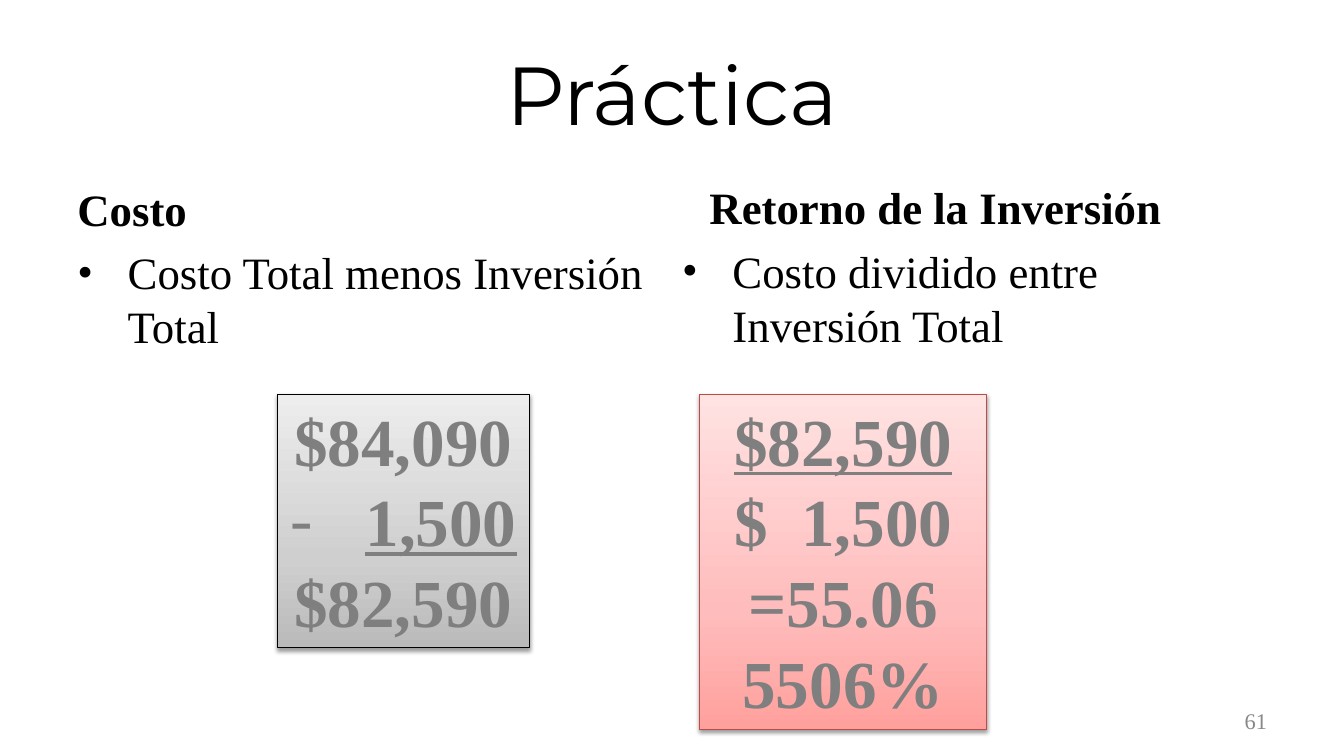
from copy import deepcopy

from lxml.etree import SubElement
from pptx import Presentation
from pptx.dml.color import RGBColor
from pptx.enum.shapes import MSO_SHAPE
from pptx.enum.text import MSO_ANCHOR, MSO_AUTO_SIZE, PP_ALIGN
from pptx.oxml.ns import qn
from pptx.util import Cm, Pt

BLACK = RGBColor(0x00, 0x00, 0x00)
GRAY = RGBColor(0x7F, 0x7F, 0x7F)
NUMBER_GRAY = RGBColor(0x88, 0x88, 0x88)
RED_LINE = RGBColor(0xBD, 0x4B, 0x48)
GRAY_SHADES = (RGBColor(0xBA, 0xBA, 0xBA), RGBColor(0xCF, 0xCF, 0xCF), RGBColor(0xED, 0xED, 0xED))
RED_SHADES = (RGBColor(0xFF, 0xA0, 0x9D), RGBColor(0xFF, 0xBC, 0xBC), RGBColor(0xFF, 0xE2, 0xE2))
STOP_POSITIONS = (0, 0.35, 1)

SERIF = "Times New Roman"
TITLE = {"name": "Montserrat", "size": Pt(58.7)}
BODY = {"name": SERIF, "size": Pt(32)}
HEADING = {**BODY, "bold": True}
FIGURE = {"name": SERIF, "size": Pt(48), "bold": True}
UNDERLINED = {**FIGURE, "underline": True}
NUMBER = {"name": SERIF, "size": Pt(16)}


def add_bullet(paragraph, character, color, indent):
    properties = paragraph._p.get_or_add_pPr()
    properties.set("marL", str(indent))
    properties.set("indent", str(-indent))
    bullet_color = SubElement(properties, qn("a:buClr"))
    SubElement(bullet_color, qn("a:srgbClr"), val=str(color))
    SubElement(properties, qn("a:buFont"), typeface=SERIF)
    SubElement(properties, qn("a:buChar"), char=character)


def write(paragraph, text, values, color, alignment):
    paragraph.alignment = alignment
    run = paragraph.add_run()
    run.text = text
    for name, value in values.items():
        setattr(run.font, name, value)
    run.font.color.rgb = color


def add_text(slide, bounds, text, values, color=BLACK, alignment=PP_ALIGN.LEFT,
             anchor=MSO_ANCHOR.TOP, bullet=None):
    frame = slide.shapes.add_textbox(*map(Cm, bounds)).text_frame
    frame.word_wrap = True
    frame.vertical_anchor = anchor
    paragraph = frame.paragraphs[0]
    if bullet:
        add_bullet(paragraph, bullet, color, Cm(1.27))
    write(paragraph, text, values, color, alignment)


def fill_gradient(shape, shades):
    shape.fill.gradient()
    shape.fill.gradient_angle = 90
    first_stop = shape.fill.gradient_stops[0]._gs
    first_stop.addnext(deepcopy(first_stop))
    for stop, shade, position in zip(shape.fill.gradient_stops, shades, STOP_POSITIONS):
        stop.color.rgb = shade
        stop.position = position


def add_shadow(shape):
    effects = SubElement(shape._element.spPr, qn("a:effectLst"))
    shadow = SubElement(effects, qn("a:outerShdw"), blurRad=str(Pt(3.1)), dist=str(Pt(1.6)),
                        dir="5400000", rotWithShape="0")
    color = SubElement(shadow, qn("a:srgbClr"), val=str(BLACK))
    SubElement(color, qn("a:alpha"), val="38000")


def add_calculation(slide, bounds, shades, line_color, rows):
    shape = slide.shapes.add_shape(MSO_SHAPE.RECTANGLE, *map(Cm, bounds))
    fill_gradient(shape, shades)
    shape.line.color.rgb = line_color
    shape.line.width = Pt(0.75)
    add_shadow(shape)
    frame = shape.text_frame
    frame.word_wrap = True
    frame.auto_size = MSO_AUTO_SIZE.SHAPE_TO_FIT_TEXT
    frame.vertical_anchor = MSO_ANCHOR.TOP
    for index, (text, values, bullet) in enumerate(rows):
        paragraph = frame.add_paragraph() if index else frame.paragraphs[0]
        if bullet:
            add_bullet(paragraph, bullet, GRAY, Cm(1.9))
        write(paragraph, text, values, GRAY, PP_ALIGN.CENTER)


def main():
    presentation = Presentation()
    presentation.slide_width = Cm(33.87)
    presentation.slide_height = Cm(19.05)
    slide = presentation.slides.add_slide(presentation.slide_layouts[6])

    add_text(slide, (1.7, 0.74, 30.48, 3.18), "Práctica", TITLE,
             alignment=PP_ALIGN.CENTER, anchor=MSO_ANCHOR.MIDDLE)
    add_text(slide, (1.7, 4.27, 14.96, 1.78), "Costo", HEADING, anchor=MSO_ANCHOR.BOTTOM)
    add_text(slide, (1.7, 6.05, 14.96, 10.97), "Costo Total menos Inversión Total", BODY, bullet="•")
    add_calculation(slide, (6.99, 9.93, 6.35, 6.4), GRAY_SHADES, BLACK, [
        ("$84,090", FIGURE, None),
        ("1,500", UNDERLINED, "-"),
        ("$82,590", FIGURE, None),
    ])
    add_text(slide, (17.63, 4.24, 14.96, 1.78), "Retorno de la Inversión", HEADING,
             anchor=MSO_ANCHOR.BOTTOM)
    add_text(slide, (16.94, 6.02, 14.96, 10.31), "Costo dividido entre Inversión Total", BODY, bullet="•")
    add_calculation(slide, (17.63, 9.93, 7.24, 8.46), RED_SHADES, RED_LINE, [
        ("$82,590", UNDERLINED, None),
        ("$  1,500", FIGURE, None),
        ("=55.06", FIGURE, None),
        ("5506%", FIGURE, None),
    ])
    add_text(slide, (24.28, 17.65, 7.9, 1.02), "61", NUMBER, NUMBER_GRAY,
             PP_ALIGN.RIGHT, MSO_ANCHOR.MIDDLE)
    presentation.save("out.pptx")


if __name__ == "__main__":
    main()
